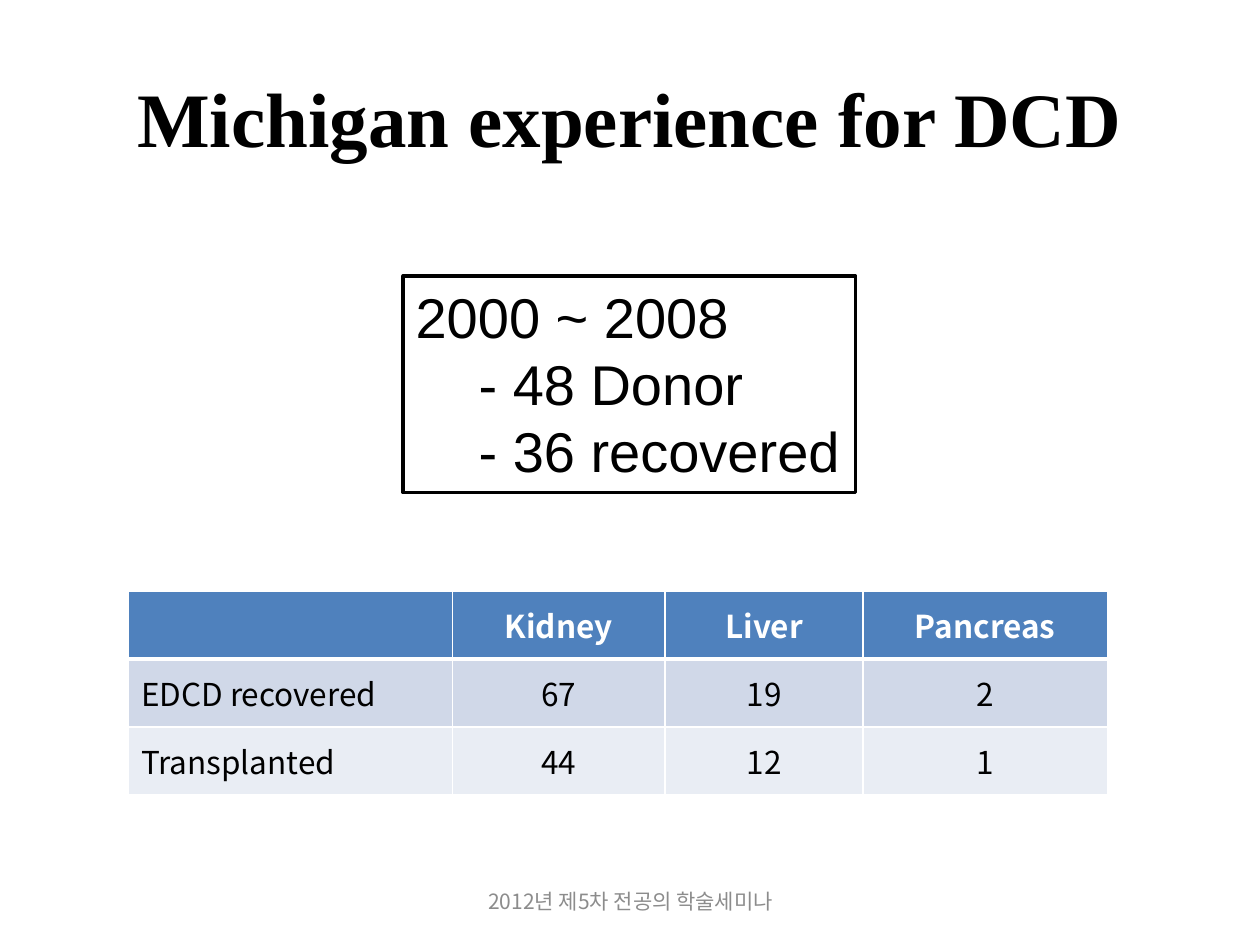
from lxml.etree import SubElement
from pptx import Presentation
from pptx.dml.color import RGBColor as RGB
from pptx.enum.text import MSO_ANCHOR as Anchor, MSO_AUTO_SIZE as Auto, PP_ALIGN as Align
from pptx.oxml.ns import qn
from pptx.util import Inches, Pt

BLACK = RGB(0x00, 0x00, 0x00)
WHITE = RGB(0xFF, 0xFF, 0xFF)
GRAY = RGB(0x8C, 0x8C, 0x8C)
BLUE = RGB(0x4F, 0x81, 0xBD)
PALE = RGB(0xD0, 0xD8, 0xE8)
LIGHT = RGB(0xE9, 0xED, 0xF4)
SANS = "Noto Sans CJK KR"


def style(para, face, size, color, bold=False, align=Align.LEFT):
    para.alignment = align
    font = para.font
    font.name, font.size, font.bold = face, Pt(size), bold
    font.color.rgb = color


def edge(cell, side, width):
    line = SubElement(cell._tc.get_or_add_tcPr(), qn(f"a:ln{side}"), w=str(Pt(width)))
    fill = SubElement(line, qn("a:solidFill"))
    SubElement(fill, qn("a:srgbClr"), val=str(WHITE))


deck = Presentation()
deck.slide_width, deck.slide_height = Inches(10), Inches(7.5)
slide = deck.slides.add_slide(deck.slide_layouts[5])
shapes = slide.shapes

title = shapes.title
title.left, title.top = Inches(0.5), Inches(0.3)
title.width, title.height = Inches(9), Inches(1.25)
title.text_frame.text = "Michigan experience for DCD"
title.text_frame.vertical_anchor = Anchor.MIDDLE
style(title.text_frame.paragraphs[0], "Times New Roman", 44, BLACK, True, Align.CENTER)

rows = [
    ["", "Kidney", "Liver", "Pancreas"],
    ["EDCD recovered", "67", "19", "2"],
    ["Transplanted", "44", "12", "1"],
]
table = shapes.add_table(3, 4, Inches(1.02), Inches(4.69), Inches(7.77), Inches(1.63)).table
for col, width in zip(table.columns, [2.57, 1.69, 1.57, 1.94]):
    col.width = Inches(width)
for r, (row, fill) in enumerate(zip(rows, [BLUE, PALE, LIGHT])):
    table.rows[r].height = Inches(0.54)
    head = r == 0
    for c, text in enumerate(row):
        cell = table.cell(r, c)
        cell.text = text
        cell.vertical_anchor = Anchor.MIDDLE
        for side in "LRTB":
            thick = (head and side == "B") or (r == 1 and side == "T")
            edge(cell, side, 3 if thick else 1)
        cell.fill.solid()
        cell.fill.fore_color.rgb = fill
        style(cell.text_frame.paragraphs[0], SANS, 18, WHITE if head else BLACK,
              head, Align.CENTER if c else Align.LEFT)

box = shapes.add_textbox(Inches(3.2), Inches(2.19), Inches(3.59), Inches(1.72))
box.line.color.rgb = BLACK
box.line.width = Pt(2)
frame = box.text_frame
frame.word_wrap = False
frame.auto_size = Auto.SHAPE_TO_FIT_TEXT
frame.text = "2000 ~ 2008\n- 48 Donor\n- 36 recovered"
for i, para in enumerate(frame.paragraphs):
    style(para, "Arial", 32, BLACK)
    if i:
        para.level = 1
        props = para._p.get_or_add_pPr()
        props.set("marL", str(Inches(0.5)))
        props.set("indent", "0")

foot = shapes.add_textbox(Inches(3.42), Inches(6.95), Inches(3.17), Inches(0.4))
frame = foot.text_frame
frame.word_wrap = True
frame.vertical_anchor = Anchor.MIDDLE
frame.text = "2012년 제5차 전공의 학술세미나"
para = frame.paragraphs[0]
style(para, SANS, 12, GRAY, align=Align.CENTER)
SubElement(para.font._element, qn("a:ea"), typeface=SANS)

deck.save("out.pptx")
